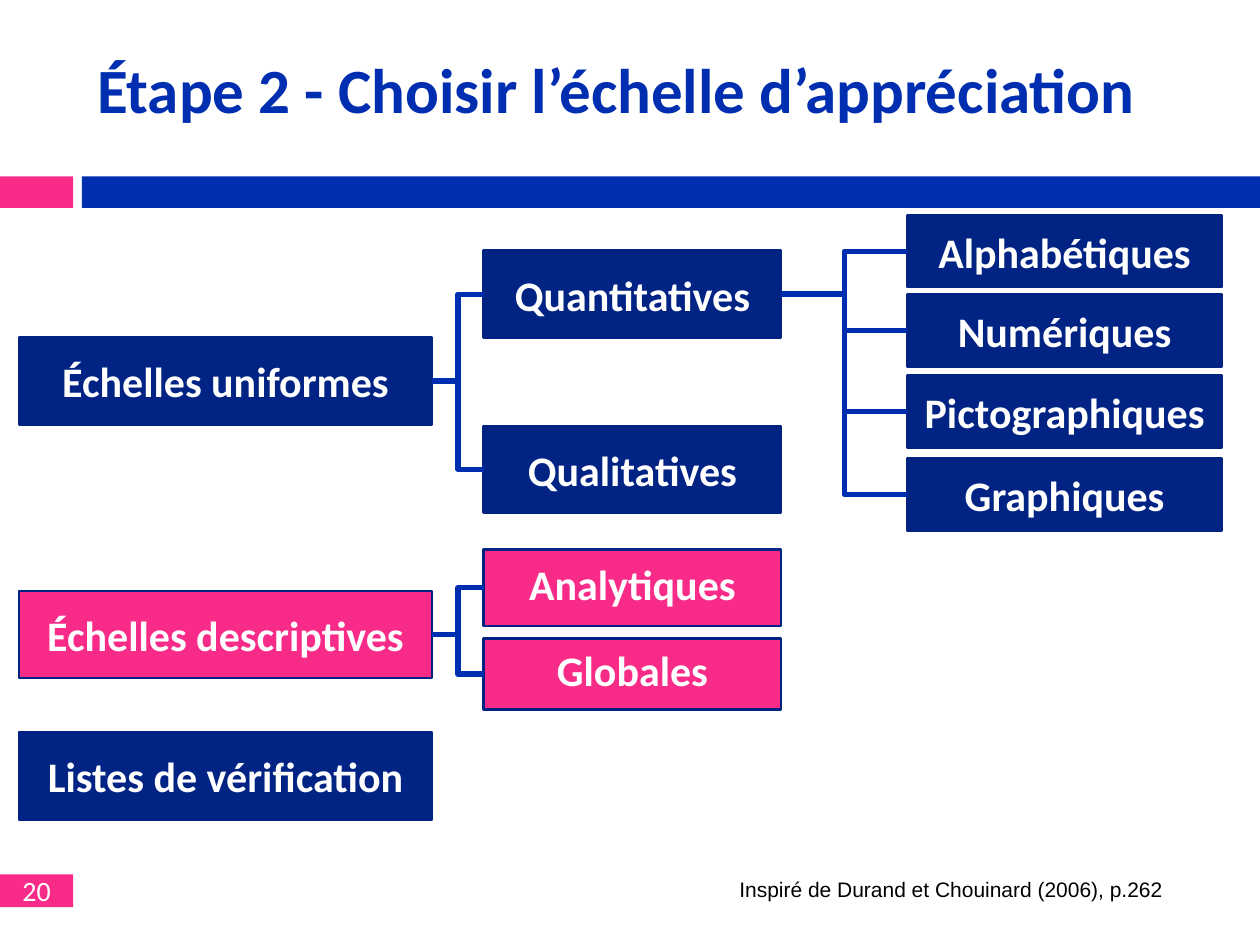
"""Build the slide on choosing a rating scale, with its tree of scale types."""
from lxml.etree import SubElement
from pptx import Presentation
from pptx.dml.color import RGBColor
from pptx.enum.shapes import MSO_CONNECTOR, MSO_SHAPE
from pptx.enum.text import MSO_ANCHOR, MSO_AUTO_SIZE, PP_ALIGN
from pptx.oxml.ns import qn
from pptx.util import Inches, Pt

BLUE = RGBColor(0x00, 0x2E, 0xB0)
NAVY = RGBColor(0x00, 0x23, 0x84)
EDGE = RGBColor(0x00, 0x22, 0x82)
PINK = RGBColor(0xF8, 0x2C, 0x88)
WHITE = RGBColor(0xFF, 0xFF, 0xFF)
BLACK = RGBColor(0x00, 0x00, 0x00)


def set_text(sp, text, size, color, font="Calibri", bold=False, align=PP_ALIGN.CENTER):
    tf = sp.text_frame
    tf.word_wrap = True
    tf.vertical_anchor = MSO_ANCHOR.MIDDLE
    p = tf.paragraphs[0]
    p.text = text
    p.alignment = align
    p.font.name, p.font.size, p.font.bold = font, Pt(size), bold
    p.font.color.rgb = color
    return p


def add_box(x, y, w, h, fill):
    sp = s.shapes.add_shape(MSO_SHAPE.RECTANGLE, Inches(x), Inches(y), Inches(w), Inches(h))
    sp.shadow.inherit = False
    sp.fill.solid()
    sp.fill.fore_color.rgb = fill
    sp.line.fill.background()
    return sp


prs = Presentation()
prs.slide_width, prs.slide_height = Inches(10), Inches(7.5)
s = prs.slides.add_slide(prs.slide_layouts[5])

add_box(0, 1.4, 0.58, 0.25, PINK)
add_box(0.65, 1.4, 9.35, 0.25, BLUE)
sp = add_box(0, 6.94, 0.58, 0.26, PINK)
sp.text_frame.margin_top = sp.text_frame.margin_bottom = 0
set_text(sp, "20", 16, WHITE)

sp = s.shapes.title
sp.left, sp.top, sp.width, sp.height = Inches(0.67), Inches(0.08), Inches(8.92), Inches(1.25)
set_text(sp, "Étape 2 - Choisir l’échelle d’appréciation", 36, BLUE, bold=True, align=PP_ALIGN.LEFT)
sp.text_frame.auto_size = MSO_AUTO_SIZE.NONE

COLUMNS = [(0.15, 3.28), (3.84, 2.36), (7.2, 2.5)]
NODES = [
    ("Échelles uniformes", 0, 2.68, 0.69, NAVY, None),
    ("Échelles descriptives", 0, 4.69, 0.69, PINK, None),
    ("Listes de vérification", 0, 5.81, 0.7, NAVY, None),
    ("Quantitatives", 1, 1.99, 0.69, NAVY, "Échelles uniformes"),
    ("Qualitatives", 1, 3.38, 0.69, NAVY, "Échelles uniformes"),
    ("Analytiques", 1, 4.36, 0.61, PINK, "Échelles descriptives"),
    ("Globales", 1, 5.07, 0.56, PINK, "Échelles descriptives"),
    ("Alphabétiques", 2, 1.71, 0.57, NAVY, "Quantitatives"),
    ("Numériques", 2, 2.34, 0.57, NAVY, "Quantitatives"),
    ("Pictographiques", 2, 2.98, 0.57, NAVY, "Quantitatives"),
    ("Graphiques", 2, 3.64, 0.57, NAVY, "Quantitatives"),
]
RIGHT_SITE, LEFT_SITE = 3, 1
boxes = {}
for name, col, top, height, fill, parent in NODES:
    left, width = COLUMNS[col]
    sp = boxes[name] = add_box(left, top, width, height, fill)
    sp.line.color.rgb = EDGE
    sp.line.width = Pt(1.5)
    p = set_text(sp, name, 24, WHITE, bold=True)
    if parent == "Échelles descriptives":
        p.line_spacing = Pt(24)
    if parent:
        link = s.shapes.add_connector(MSO_CONNECTOR.ELBOW, 0, 0, 0, 0)
        link.begin_connect(boxes[parent], RIGHT_SITE)
        link.end_connect(sp, LEFT_SITE)
        link.line.color.rgb = BLUE
        link.line.width = Pt(3)
        SubElement(link._element.spPr, qn("a:effectLst"))

sp = s.shapes.add_textbox(Inches(5.77), Inches(6.91), Inches(3.64), Inches(0.3))
set_text(sp, "Inspiré de Durand et Chouinard (2006), p.262", 12, BLACK, "Arial", align=PP_ALIGN.LEFT)

prs.save("out.pptx")
